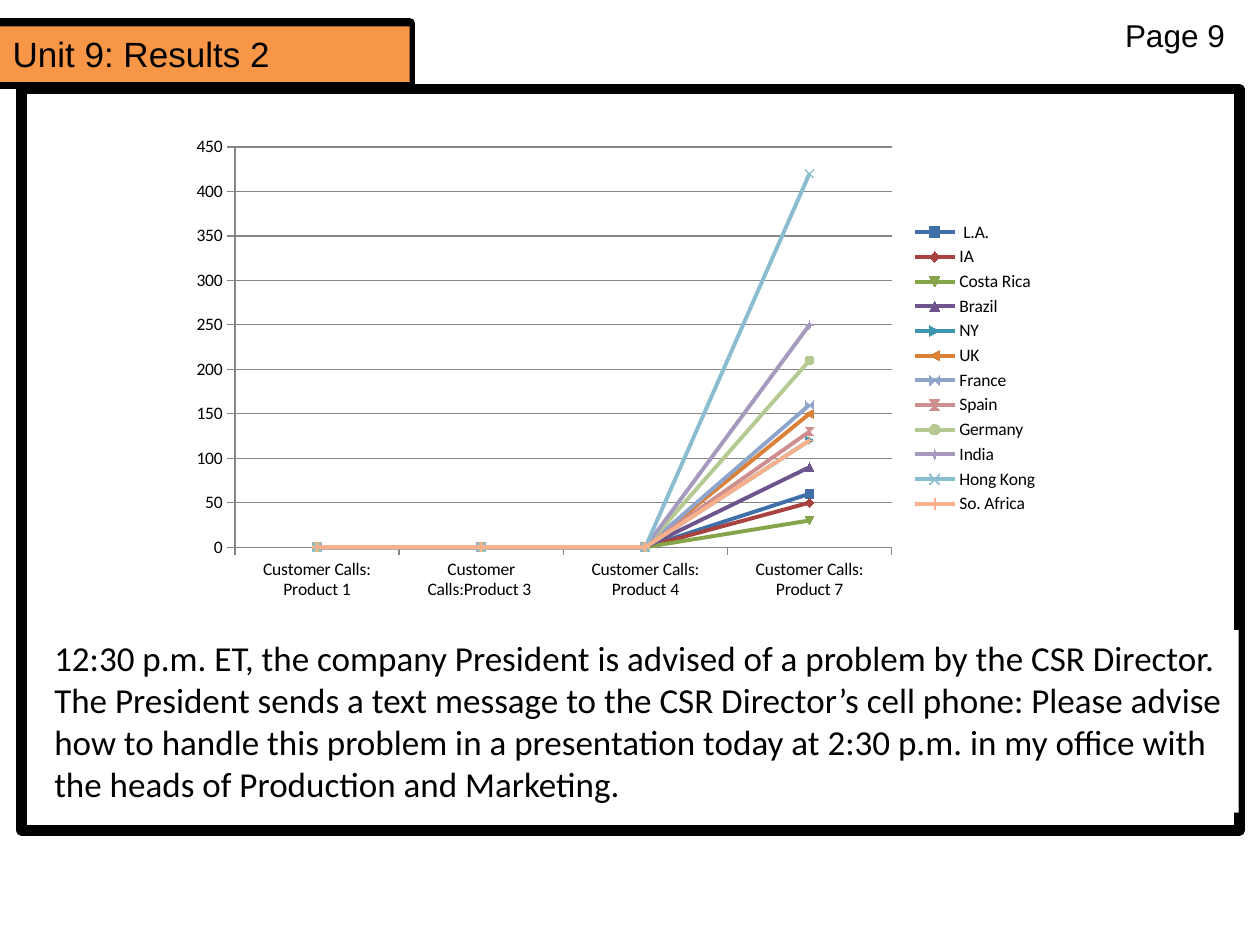
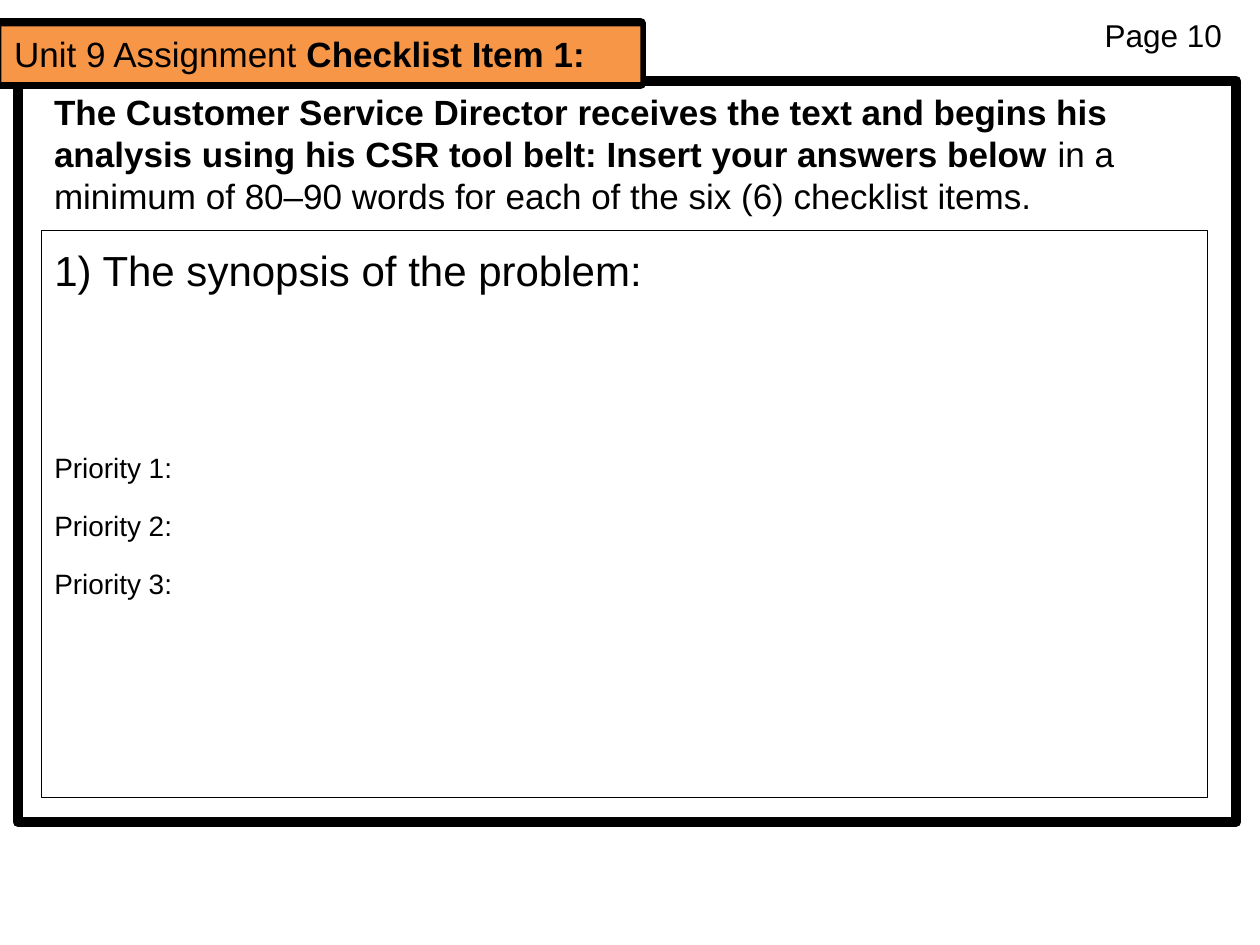
from lxml import etree
from pptx import Presentation
from pptx.chart.data import CategoryChartData
from pptx.dml.color import RGBColor
from pptx.enum.chart import XL_CHART_TYPE as ChartType, XL_LEGEND_POSITION as LegendSide, XL_TICK_MARK as Tick
from pptx.enum.shapes import MSO_SHAPE as Shape
from pptx.enum.text import MSO_ANCHOR as Anchor, MSO_AUTO_SIZE as AutoSize, PP_ALIGN as Align
from pptx.oxml.ns import qn
from pptx.util import Cm, Pt

COLORS = {"ink": "000000", "paper": "FFFFFF", "tab": "F79646", "grid": "868686"}
SERIES = [
    (" L.A.", 60, "406FA9"), ("IA", 50, "A8423F"), ("Costa Rica", 30, "86A44A"),
    ("Brazil", 90, "6E548D"), ("NY", 120, "3D96AE"), ("UK", 150, "DA8137"),
    ("France", 160, "8EA5CB"), ("Spain", 130, "CE8E8D"), ("Germany", 210, "B5CA92"),
    ("India", 250, "A599BD"), ("Hong Kong", 420, "8BBDD0"), ("So. Africa", 120, "F9B08B"),
]


def style(page, shape, box, fill=None, line=0):
    shape.left, shape.top, shape.width, shape.height = [Cm(length) for length in box]
    if fill:
        shape.fill.solid()
        shape.fill.fore_color.rgb = RGBColor.from_string(COLORS[fill])
    else:
        shape.fill.background()
    if line:
        shape.line.width = Pt(line)
        shape.line.color.rgb = RGBColor.from_string(COLORS["ink"])
    else:
        shape.line.fill.background()
    shape.shadow.inherit = False
    page.shapes.element.append(shape.element)


def write(shape, paras, size, font="Arial"):
    frame = shape.text_frame
    frame.word_wrap = True
    frame.auto_size = AutoSize.NONE
    frame.vertical_anchor = Anchor.TOP
    for index, spans in enumerate(paras):
        para = frame.paragraphs[0] if index == 0 else frame.add_paragraph()
        para.alignment = Align.LEFT
        para.space_before = Pt(0)
        props = para._p.get_or_add_pPr()
        props.set("marL", "0")
        props.set("indent", "0")
        etree.SubElement(props, qn("a:buNone"))
        para.font.name = font
        para.font.size = Pt(size)
        para.font.color.rgb = RGBColor.from_string(COLORS["ink"])
        for text, bold in spans:
            span = para.add_run()
            span.text = text
            if bold:
                span.font.bold = True


deck = Presentation()
deck.slide_width, deck.slide_height = Cm(25.4), Cm(19.05)

pages = []
for heading, label, label_left, label_width, frame_left, frame_top, tab_left, tab_width in [
    ([("Unit 9: Results 2", False)], "Page 9", 22.43, 2.54, 0.43, 1.8, 0, 8.26),
    ([("Unit 9 Assignment ", False), ("Checklist Item 1:", True)],
     "Page 10", 22.02, 2.97, 0.36, 1.63, 0.03, 12.88),
]:
    page = deck.slides.add_slide(deck.slide_layouts[1])
    pages.append(page)
    border = page.shapes.add_shape(Shape.RECTANGLE, 0, 0, 0, 0)
    style(page, border, (frame_left, frame_top, 24.56, 14.94), line=6)
    page_label = page.shapes.add_textbox(0, 0, 0, 0)
    style(page, page_label, (label_left, 0.2, label_width, 1.02), "paper")
    write(page_label, [[(label, False)]], 18)
    tab = page.shapes.add_shape(Shape.RECTANGLE, 0, 0, 0, 0)
    style(page, tab, (-0.05, 0.46, tab_left + tab_width + 0.05, 1.24), "tab", 6)
    title = page.shapes.title
    style(page, title, (tab_left, 0.53, tab_width, 1.12), "tab")
    write(title, [heading], 20)

results, checklist = pages

message = results.placeholders[1]
style(results, message, (0.84, 12.7, 24.13, 3.68), "paper")
write(message, [
    [("12:30 p.m. ET, the company President is advised of a problem by the CSR Director.", False)],
    [("The President sends a text message to the CSR Director’s cell phone: Please advise how to "
      "handle this problem in a presentation today at 2:30 p.m. in my office with the heads of "
      "Production and Marketing.", False)],
], 20, "Calibri")

calls = CategoryChartData()
calls.categories = ["Customer Calls: Product 1", "Customer Calls:Product 3 ",
                    "Customer Calls: Product 4", "Customer Calls: Product 7"]
for name, last_value, color in SERIES:
    calls.add_series(name, [0, 0, 0, last_value])
chart = results.shapes.add_chart(
    ChartType.LINE_MARKERS, Cm(3.61), Cm(2.57), Cm(17.58), Cm(9.7), calls).chart
chart.has_title = False
chart.font.name = "Calibri"
chart.font.size = Pt(10)
chart.font.color.rgb = RGBColor.from_string(COLORS["ink"])
chart.has_legend = True
chart.legend.position = LegendSide.RIGHT
chart.legend.include_in_layout = False
chart.plots[0].vary_by_categories = False
grid = RGBColor.from_string(COLORS["grid"])
for axis in (chart.category_axis, chart.value_axis):
    axis.major_tick_mark = Tick.OUTSIDE
    axis.format.line.color.rgb = grid
chart.value_axis.minimum_scale = 0
chart.value_axis.maximum_scale = 450
chart.value_axis.major_unit = 50
chart.value_axis.major_gridlines.format.line.color.rgb = grid
for series, (name, last_value, color) in zip(chart.plots[0].series, SERIES):
    shade = RGBColor.from_string(color)
    series.smooth = False
    series.format.line.width = Pt(2.25)
    series.format.line.color.rgb = shade
    series.marker.format.fill.solid()
    series.marker.format.fill.fore_color.rgb = shade
    series.marker.format.line.color.rgb = shade

answers = checklist.placeholders[1]
style(checklist, answers, (0.84, 4.65, 23.5, 11.43), "paper", 0.5)
write(answers, [[("1) The synopsis of the problem:", False)]]
      + [[(f"Priority {number}:", False)] for number in (1, 2, 3)], 16)
for para in answers.text_frame.paragraphs:
    para.line_spacing = 1.15
    para.space_after = Pt(11)
synopsis = answers.text_frame.paragraphs[0]
synopsis.font.size = Pt(24)
synopsis.space_after = Pt(86)

intro = checklist.shapes.add_textbox(0, 0, 0, 0)
style(checklist, intro, (0.84, 1.7, 23.93, 2.82))
write(intro, [[
    ("The Customer Service Director receives the text and begins his analysis using his CSR tool "
     "belt: Insert your answers below ", True),
    ("in a minimum of 80–90 words for each of the six (6) checklist items.", False),
]], 20)

deck.save("out.pptx")
